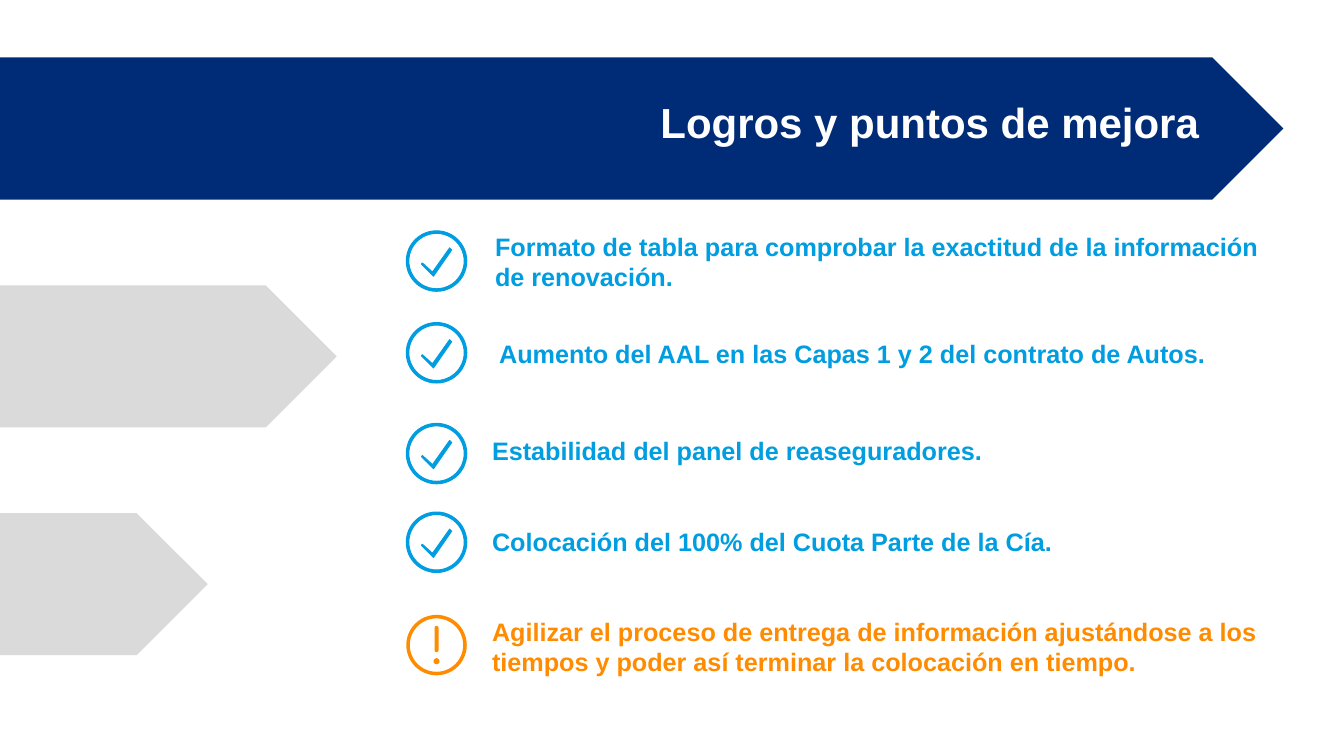
from pptx import Presentation, util as u
from pptx.dml import color
from pptx.enum import shapes, text

COLORS = {"navy": "002C77", "grey": "DADADA", "sky": "009DE0",
          "orange": "FF8C00", "white": "FFFFFF"}
FRAME = {"margin_left": 0, "margin_top": 0, "margin_right": 0,
         "margin_bottom": 0, "word_wrap": True,
         "vertical_anchor": text.MSO_ANCHOR.TOP}
FONT = {"name": "Arial", "bold": True}
BANDS = [(0.57, 12.73, "navy"), (2.83, 3.34, "grey"), (5.09, 2.06, "grey")]
BAND_HEIGHT = 1.41
ICON_LEFT, ICON_SIZE = 4.03, 0.6
TICK = [(0.27, 0.45), (0.15, 0.33), (0.16, 0.32), (0.26, 0.41),
        (0.43, 0.17), (0.45, 0.19)]
ACHIEVEMENTS = [
    (2.29, (4.91, 2.29, 7.79, 0.61), 0,
     "Formato de tabla para comprobar la exactitud de la información de renovación."),
    (3.2, (4.88, 3.36, 7.82, 0.3), 0.07,
     "Aumento del AAL en las Capas 1 y 2 del contrato de Autos."),
    (4.2, (4.88, 4.32, 7.82, 0.3), 0, "Estabilidad del panel de reaseguradores."),
    (5.08, (4.88, 5.22, 7.82, 0.3), 0, "Colocación del 100% del Cuota Parte de la Cía."),
]
IMPROVEMENT = (6.1, (4.88, 6.11, 7.82, 0.61), 0,
               "Agilizar el proceso de entrega de información ajustándose a los "
               "tiempos y poder así terminar la colocación en tiempo.")


def rgb(name):
    """Return the named palette colour."""
    return color.RGBColor.from_string(COLORS[name])


def apply(target, values):
    """Set each format value on the target."""
    for attribute, value in values.items():
        setattr(target, attribute, value)


def paint(part, fill, outline=0):
    """Fill a part flat, with an optional outline in the same colour."""
    part.shadow.inherit = False
    part.fill.solid()
    part.fill.fore_color.rgb = rgb(fill)
    if outline:
        part.line.color.rgb = rgb(fill)
        part.line.width = u.Pt(outline)
    else:
        part.line.fill.background()


def add_part(parent, kind, box, fill, outline=0):
    """Draw one painted preset shape in the box."""
    part = parent.add_shape(kind, *map(u.Inches, box))
    paint(part, fill, outline)
    return part


def write(frame, wording, size, ink):
    """Write one left-aligned bold paragraph."""
    apply(frame, FRAME)
    frame.text = wording
    paragraph = frame.paragraphs[0]
    paragraph.alignment = text.PP_ALIGN.LEFT
    apply(paragraph.font, {**FONT, "size": u.Pt(size)})
    paragraph.font.color.rgb = rgb(ink)
    return paragraph


def add_bands(slide):
    """Draw the pointed bands that enter from the left edge."""
    for top, width, fill in BANDS:
        add_part(slide.shapes, shapes.MSO_SHAPE.PENTAGON,
                 (0, top, width, BAND_HEIGHT), fill)


def add_title(slide, box):
    """Place the title on the navy band."""
    title = slide.shapes.title
    apply(title, dict(zip(("left", "top", "width", "height"), map(u.Inches, box))))
    heading = write(title.text_frame, "Logros y puntos de mejora", 30, "white")
    heading.line_spacing = 0.8
    title.text_frame.auto_size = text.MSO_AUTO_SIZE.NONE
    slide.shapes._spTree.append(title._element)


def add_ring(icon, left, top, thickness, ink, outline=0):
    """Draw the ring around an icon."""
    ring = add_part(icon, shapes.MSO_SHAPE.DONUT,
                    (left, top, ICON_SIZE, ICON_SIZE), ink, outline)
    ring.adjustments[0] = thickness / ICON_SIZE


def add_check(slide, left, top, ink):
    """Draw a ringed tick."""
    icon = slide.shapes.add_group_shape().shapes
    add_ring(icon, left, top, 0.025, ink, 0.75)
    points = [(u.Inches(left + x), u.Inches(top + y)) for x, y in TICK]
    outline = icon.build_freeform(*points[0])
    outline.add_line_segments(points[1:], close=True)
    paint(outline.convert_to_shape(), ink, 0.75)


def add_warning(slide, left, top, ink):
    """Draw a ringed exclamation mark."""
    icon = slide.shapes.add_group_shape().shapes
    add_ring(icon, left, top, 0.035, ink)
    bar = add_part(icon, shapes.MSO_SHAPE.ROUNDED_RECTANGLE,
                   (left + 0.28, top + 0.11, 0.04, 0.26), ink)
    bar.adjustments[0] = 0.5
    add_part(icon, shapes.MSO_SHAPE.OVAL,
             (left + 0.27, top + 0.43, 0.06, 0.06), ink)


def add_point(slide, point, add_icon, ink):
    """Place one icon with its statement."""
    icon_top, box, inset, wording = point
    add_icon(slide, ICON_LEFT, icon_top, ink)
    statement = slide.shapes.add_textbox(*map(u.Inches, box)).text_frame
    write(statement, wording, 18, ink)
    apply(statement, {"margin_left": u.Inches(inset),
                      "auto_size": text.MSO_AUTO_SIZE.SHAPE_TO_FIT_TEXT})


def main():
    """Build and save the slide."""
    deck = Presentation()
    apply(deck, {"slide_width": u.Inches(13.33), "slide_height": u.Inches(7.5)})
    slide = deck.slides.add_slide(deck.slide_layouts[5])
    add_bands(slide)
    for achievement in ACHIEVEMENTS:
        add_point(slide, achievement, add_check, "sky")
    add_point(slide, IMPROVEMENT, add_warning, "orange")
    add_title(slide, (6.55, 1.05, 5.53, 0.54))
    deck.save("out.pptx")


if __name__ == "__main__":
    main()
